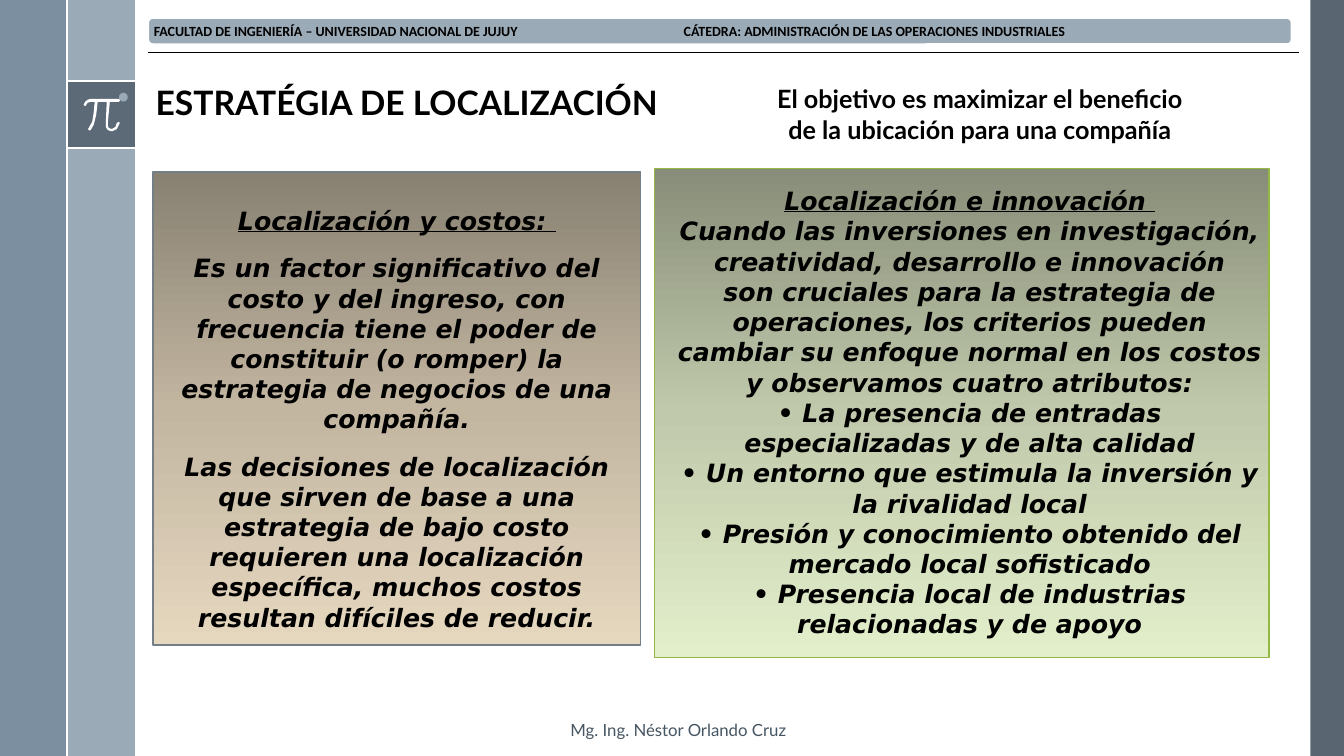
from dataclasses import dataclass

from lxml import etree
from pptx import Presentation
from pptx.dml.color import RGBColor
from pptx.enum.shapes import MSO_CONNECTOR, MSO_SHAPE
from pptx.enum.text import MSO_ANCHOR, PP_ALIGN
from pptx.oxml.ns import qn
from pptx.util import Pt

STRAIGHT = MSO_CONNECTOR.STRAIGHT
RECTANGLE, ROUNDED = MSO_SHAPE.RECTANGLE, MSO_SHAPE.ROUNDED_RECTANGLE
TOP, MIDDLE = MSO_ANCHOR.TOP, MSO_ANCHOR.MIDDLE
LEFT, CENTER = PP_ALIGN.LEFT, PP_ALIGN.CENTER


@dataclass(frozen=True)
class Theme:
    dark: str = "475562"
    slate: str = "6A8093"
    mist: str = "9BAAB7"
    white: str = "FFFFFF"
    black: str = "000000"
    footer: str = "465562"
    sand: tuple = ("888071", "C2B6A1", "E6D7BF")
    sand_edge: str = "737E87"
    green: tuple = ("878D78", "C0C9AB", "E3EFCB")
    green_edge: str = "95B845"
    heading_font: str = "Lato"
    header_font: str = "Calibri"
    body_font: str = "DejaVu Sans"
    title_size: int = 24
    body_size: int = 18
    footer_size: int = 12
    header_size: int = 10


theme = Theme()


def add_block(preset, left, top, width, height, colour):
    block = page.shapes.add_shape(preset, Pt(left), Pt(top), Pt(width), Pt(height))
    block.shadow.inherit = False
    block.fill.solid()
    block.fill.fore_color.rgb = RGBColor.from_string(colour)
    block.line.fill.background()
    return block


def write(box, paragraphs, font, size, colour=theme.black, bold=True, italic=False,
          align=CENTER, anchor=TOP):
    """Fill the box with paragraphs, each one a string, and return its text frame."""
    frame = box.text_frame
    frame.word_wrap = True
    frame.vertical_anchor = anchor
    for number, words in enumerate(paragraphs):
        para = frame.add_paragraph() if number else frame.paragraphs[0]
        para.alignment = align
        span = para.add_run()
        span.text = words
        span.font.name, span.font.size = font, Pt(size)
        span.font.bold, span.font.italic = bold, italic
        span.font.color.rgb = RGBColor.from_string(colour)
    return frame


deck = Presentation()
deck.slide_width, deck.slide_height = Pt(960), Pt(540)
page = deck.slides.add_slide(deck.slide_layouts[5])

# Side bands: left, top, width, height, colour, opacity in percent
for left, top, width, height, colour, opacity in (
    (936, 0, 24, 540, theme.dark, 90),
    (48, 0, 48.4, 540, theme.mist, 100),
    (0, 0, 48, 540, theme.slate, 88),
    (48, 58, 48.4, 48, theme.dark, 75),
):
    band = add_block(RECTANGLE, left, top, width, height, colour)
    if opacity < 100:
        tint = band._element.spPr.find(".//" + qn("a:srgbClr"))
        etree.SubElement(tint, qn("a:alpha"), val=str(opacity * 1000))

# Pi symbol, in hundredths of an inch
pi_outline = (
    (118, 98), (90, 98), (87, 99), (84.5, 101), (83, 104), (84, 105), (85, 105),
    (87, 102), (90, 101), (94, 101), (93, 112), (91.5, 121), (88, 127), (87.5, 128),
    (88, 129), (89, 129.5), (90, 129), (93, 124), (95.5, 114), (97, 101), (106, 101),
    (105, 122), (105, 126), (107, 129), (110, 130), (112, 130), (116, 128), (119, 122),
    (118, 121), (116, 122), (114.5, 126), (111, 128), (108, 127), (107, 125), (107, 122),
    (109, 101), (118, 101), (119, 100), (119, 99),
)
points = [(Pt(x * 0.72), Pt(y * 0.72)) for x, y in pi_outline]
builder = page.shapes.build_freeform(*points[0], scale=1.0)
builder.add_line_segments(points[1:], close=True)
pi_symbol = builder.convert_to_shape()
pi_symbol.shadow.inherit = False
pi_symbol.fill.solid()
pi_symbol.fill.fore_color.rgb = RGBColor.from_string(theme.white)
pi_symbol.line.fill.background()

# Rules: start, end, colour, weight
for x1, y1, x2, y2, colour, weight in (
    (48, 58, 96.4, 58, theme.white, 1.5),
    (48, 106, 96.4, 106, theme.white, 1.5),
    (48, 0, 48, 540, theme.white, 1.5),
    (106, 37.4, 928, 37.4, theme.black, 0.5),
):
    rule = page.shapes.add_connector(STRAIGHT, Pt(x1), Pt(y1), Pt(x2), Pt(y2))
    rule.line.color.rgb = RGBColor.from_string(colour)
    rule.line.width = Pt(weight)
    etree.SubElement(rule._element.spPr, qn("a:effectLst"))

# Header bar, its second half placed by a tab stop
header = add_block(ROUNDED, 106, 13, 816.4, 18.4, theme.mist)
header.line.color.rgb = RGBColor.from_string(theme.white)
header.line.width = Pt(1)
header_frame = write(
    header,
    ["FACULTAD DE INGENIERÍA – UNIVERSIDAD NACIONAL DE JUJUY\t"
     "CÁTEDRA: ADMINISTRACIÓN DE LAS OPERACIONES INDUSTRIALES"],
    theme.header_font, theme.header_size, align=LEFT, anchor=MIDDLE)
header_frame.margin_left = header_frame.margin_right = Pt(3)
header_frame.margin_top = header_frame.margin_bottom = Pt(0)
header_props = header_frame.paragraphs[0]._p.get_or_add_pPr()
tab_list = etree.SubElement(header_props, qn("a:tabLst"))
etree.SubElement(tab_list, qn("a:tab"), pos=str(Pt(378.5)), algn="l")

# Title, brought in front of the side bands its bullet sits on
title = page.shapes.title
title._element.getparent().append(title._element)
title.left, title.top, title.width, title.height = Pt(77), Pt(54.7), Pt(441), Pt(54)
title_frame = write(title, ["ESTRATÉGIA DE LOCALIZACIÓN"],
                    theme.heading_font, theme.title_size, align=LEFT)
title_props = title_frame.paragraphs[0]._p.get_or_add_pPr()
title_props.set("marL", str(Pt(27)))
title_props.set("indent", str(Pt(-27)))
bullet_colour = etree.SubElement(title_props, qn("a:buClr"))
etree.SubElement(bullet_colour, qn("a:srgbClr"), val=theme.mist)
etree.SubElement(title_props, qn("a:buChar"), char="•")

goal = page.shapes.add_textbox(Pt(536.4), Pt(56.2), Pt(327), Pt(51))
write(goal, ["El objetivo es maximizar el beneficio de la ubicación para una compañía"],
      theme.heading_font, theme.body_size)

footer = page.shapes.add_textbox(Pt(400.3), Pt(510.5), Pt(232.6), Pt(21.6))
write(footer, ["Mg. Ing. Néstor Orlando Cruz"], theme.heading_font, theme.footer_size,
      colour=theme.footer, bold=False, align=LEFT)

costs = (
    "Localización y costos: ",
    "Es un factor significativo del costo y del ingreso, con frecuencia tiene el poder "
    "de constituir (o romper) la estrategia de negocios de una compañía.",
    "Las decisiones de localización que sirven de base a una estrategia de bajo costo "
    "requieren una localización específica, muchos costos resultan difíciles de reducir.",
)
innovation = (
    "Localización e innovación ",
    "Cuando las inversiones en investigación, creatividad, desarrollo e innovación",
    "son cruciales para la estrategia de operaciones, los criterios pueden cambiar su "
    "enfoque normal en los costos y observamos cuatro atributos:",
    "• La presencia de entradas especializadas y de alta calidad",
    "• Un entorno que estimula la inversión y la rivalidad local",
    "• Presión y conocimiento obtenido del mercado local sofisticado",
    "• Presencia local de industrias relacionadas y de apoyo",
)

# Panels: panel frame, text frame, gradient, edge, paragraphs, gap between paragraphs
for panel_frame, text_frame, shades, edge, paragraphs, gap in (
    ((109.4, 122.8, 348, 338), (109.4, 143.3, 348, 315.4),
     theme.sand, theme.sand_edge, costs, 12),
    ((467.5, 120.2, 439, 349.4), (474.5, 128.9, 436.3, 334),
     theme.green, theme.green_edge, innovation, 0),
):
    panel = add_block(RECTANGLE, *panel_frame, shades[0])
    panel.line.color.rgb = RGBColor.from_string(edge)
    panel.line.width = Pt(1)
    panel.fill.gradient()
    panel.fill.gradient_angle = 270
    stops = panel._element.spPr.find(".//" + qn("a:gsLst"))
    stops.clear()
    for position, shade in zip((0, 50000, 100000), shades):
        stop = etree.SubElement(stops, qn("a:gs"), pos=str(position))
        etree.SubElement(stop, qn("a:srgbClr"), val=shade)

    box = page.shapes.add_textbox(*(Pt(length) for length in text_frame))
    frame = write(box, paragraphs, theme.body_font, theme.body_size, italic=True)
    frame.paragraphs[0].runs[0].font.underline = True
    for number, para in enumerate(frame.paragraphs):
        para.line_spacing = Pt(21.6)
        para.space_before = Pt(gap if number else 0)

deck.save("out.pptx")
